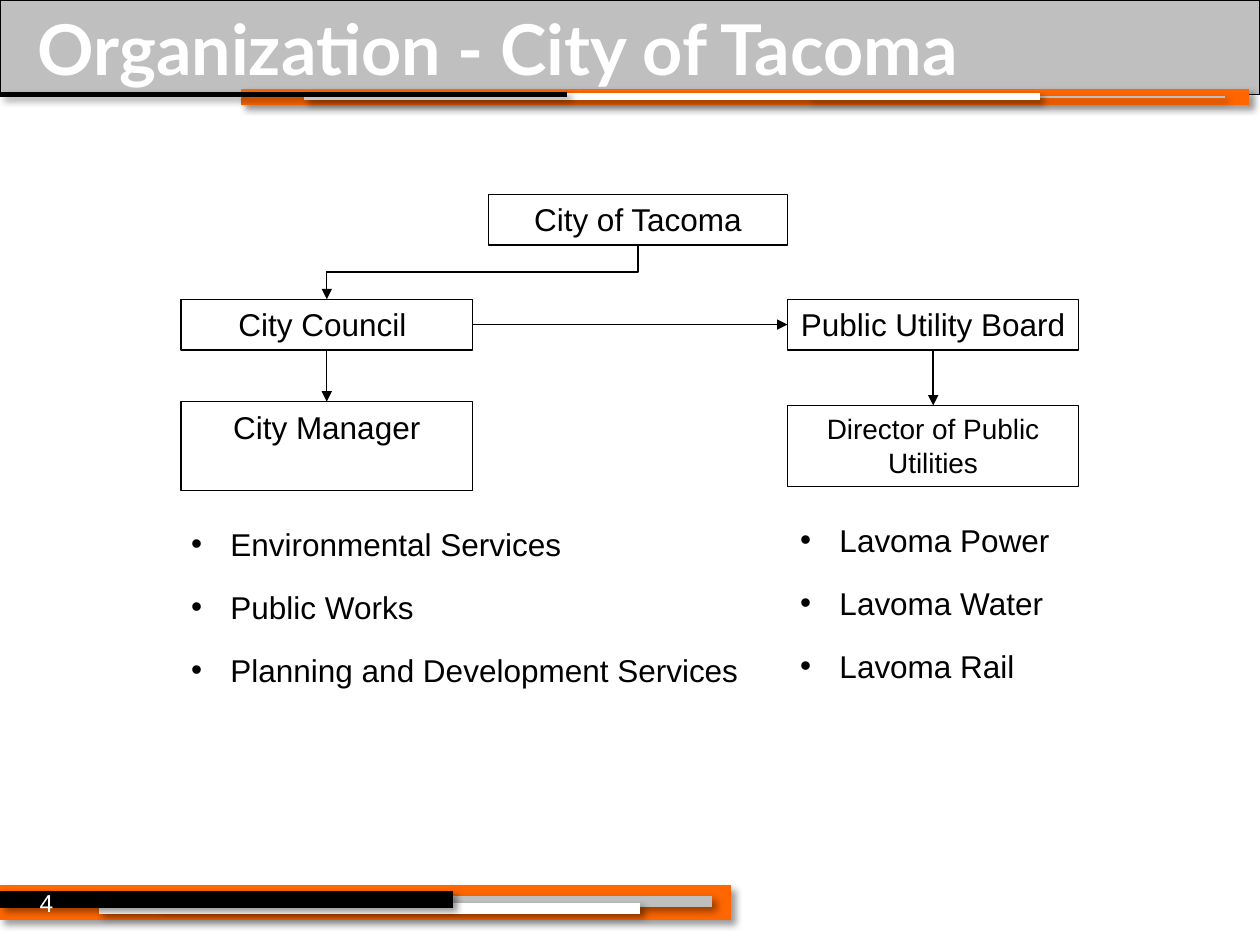
from lxml.etree import SubElement
from pptx import Presentation
from pptx.dml.color import RGBColor
from pptx.enum.shapes import MSO_CONNECTOR as Connector, MSO_SHAPE as Shape
from pptx.enum.text import MSO_ANCHOR as Anchor, MSO_AUTO_SIZE as AutoSize, PP_ALIGN as Align
from pptx.oxml import parse_xml
from pptx.oxml.ns import nsdecls, qn
from pptx.util import Pt

BLACK = RGBColor(0x00, 0x00, 0x00)
WHITE = RGBColor(0xFF, 0xFF, 0xFF)
GREY = RGBColor(0xBF, 0xBF, 0xBF)
ORANGE = RGBColor(0xFF, 0x66, 0x00)

TOP, LEFT, BOTTOM, RIGHT = range(4)
LIST_INDENT = 22.5

# start x, end x, y, colour, thickness
BANDS = [
    (138, 714, 55.5, ORANGE, 9),
    (0, 418, 516, ORANGE, 20),
    (90, 407, 515, GREY, 6.5),
    (56.5, 366, 519, WHITE, 6.5),
    (0, 259, 514, BLACK, 10),
    (462, 700, 55.5, GREY, 1.5),
    (174, 594, 55, WHITE, 4.25),
    (0, 324, 54, BLACK, 3),
]


def place(shape, left, top, width, height):
    shape.left, shape.top = Pt(left), Pt(top)
    shape.width, shape.height = Pt(width), Pt(height)


def write(shape, *lines, size=18, color=BLACK, font="Arial", bold=False,
          align=Align.LEFT, anchor=Anchor.TOP, line_spacing=None, bulleted=False):
    frame = shape.text_frame
    frame.text = "\n".join(lines)
    frame.word_wrap = True
    frame.auto_size = AutoSize.NONE
    frame.vertical_anchor = anchor
    for paragraph in frame.paragraphs:
        if bulleted:
            props = paragraph._p.get_or_add_pPr()
            props.set("marL", str(Pt(LIST_INDENT)))
            props.set("indent", str(-Pt(LIST_INDENT)))
            SubElement(props, qn("a:buChar")).set("char", "•")
        paragraph.alignment = align
        paragraph.space_before = Pt(0)
        if line_spacing:
            paragraph.line_spacing = Pt(line_spacing)
        for run in paragraph.runs:
            run.font.size = Pt(size)
            run.font.name = font
            run.font.bold = bold
            run.font.color.rgb = color


def add_box(slide, left, top, width, height, fill=None):
    box = slide.shapes.add_shape(Shape.RECTANGLE, Pt(left), Pt(top), Pt(width), Pt(height))
    box.shadow.inherit = False
    if fill is None:
        box.fill.background()
    else:
        box.fill.solid()
        box.fill.fore_color.rgb = fill
    box.line.color.rgb = BLACK
    box.line.width = Pt(0.75)
    return box


def add_unit(slide, name, left, top, width, height, size=18):
    unit = add_box(slide, left, top, width, height)
    write(unit, name, size=size, align=Align.CENTER)
    return unit


def style_line(line, color, width, effects=""):
    line.line.color.rgb = color
    line.line.width = Pt(width)
    line._element.spPr.append(
        parse_xml(f"<a:effectLst {nsdecls('a')}>{effects}</a:effectLst>"))


def add_band(slide, start, end, y, color, thickness):
    band = slide.shapes.add_connector(Connector.STRAIGHT, Pt(start), Pt(y), Pt(end), Pt(y))
    style_line(band, color, thickness,
               f'<a:outerShdw blurRad="{Pt(4)}" dist="{Pt(3)}" dir="2700000">'
               '<a:srgbClr val="000000"><a:alpha val="40000"/></a:srgbClr></a:outerShdw>')


def finish_arrow(arrow):
    style_line(arrow, BLACK, 0.75)
    SubElement(arrow.line._get_or_add_ln(), qn("a:tailEnd")).set("type", "triangle")


def add_arrow(slide, source, source_side, target, target_side):
    arrow = slide.shapes.add_connector(Connector.STRAIGHT, 0, 0, 0, 0)
    arrow.begin_connect(source, source_side)
    arrow.end_connect(target, target_side)
    finish_arrow(arrow)


def add_elbow_down(slide, source, target):
    """Bent arrow from the bottom of source to the top of a target on its left."""
    start_x, start_y = source.left + source.width // 2, source.top + source.height
    end_x, end_y = target.left + target.width // 2, target.top
    drop, run = end_y - start_y, start_x - end_x
    # The preset runs sideways first, so lay it out unrotated and turn it by 90 degrees.
    left = (start_x + end_x - drop) // 2
    top = (start_y + end_y - run) // 2
    arrow = slide.shapes.add_connector(Connector.ELBOW, left, top, left + drop, top + run)
    arrow._element.spPr.find(qn("a:xfrm")).set("rot", "5400000")
    finish_arrow(arrow)


def add_header(slide):
    add_box(slide, 0, 0, 720, 54, fill=GREY)
    for band in BANDS:
        add_band(slide, *band)

    title = slide.shapes.title
    place(title, 0, 0, 720, 54)
    write(title, "Organization - City of Tacoma", size=40, color=WHITE,
          font="Lato", bold=True, anchor=Anchor.MIDDLE)
    title.text_frame.margin_left = Pt(21.6)
    slide.shapes._spTree.append(title._element)  # bring in front of the bar

    number = slide.shapes.add_textbox(Pt(1.5), Pt(504), Pt(36), Pt(30))
    write(number, "4", size=14, color=WHITE, align=Align.RIGHT)


def add_chart_of_units(slide):
    left, right, width = 103.5, 450, 166.5
    city = add_unit(slide, "City of Tacoma", 279, 111, 171, 29)
    council = add_unit(slide, "City Council ", left, 171, width, 29)
    board = add_unit(slide, "Public Utility Board", right, 171, width, 29)
    manager = add_unit(slide, "City Manager", left, 229.5, width, 51)
    director = add_unit(slide, "Director of Public Utilities", right, 231.75, width, 46.25, size=16)

    add_elbow_down(slide, city, council)
    add_arrow(slide, council, BOTTOM, manager, TOP)
    add_arrow(slide, council, RIGHT, board, LEFT)
    add_arrow(slide, board, BOTTOM, director, TOP)


def fill_lists(slide):
    city_services, utilities = slide.placeholders[1], slide.placeholders[2]
    place(city_services, 102, 282, 342, 112)
    write(city_services, "Environmental Services", "Public Works",
          "Planning and Development Services", line_spacing=36, bulleted=True)
    place(utilities, 450, 279.5, 180, 117)
    write(utilities, "Lavoma Power", "Lavoma Water", "Lavoma Rail",
          line_spacing=36, bulleted=True)


def main():
    deck = Presentation()
    deck.slide_width, deck.slide_height = Pt(720), Pt(540)
    slide = deck.slides.add_slide(deck.slide_layouts.get_by_name("Two Content"))
    add_header(slide)
    add_chart_of_units(slide)
    fill_lists(slide)
    deck.save("out.pptx")


if __name__ == "__main__":
    main()
